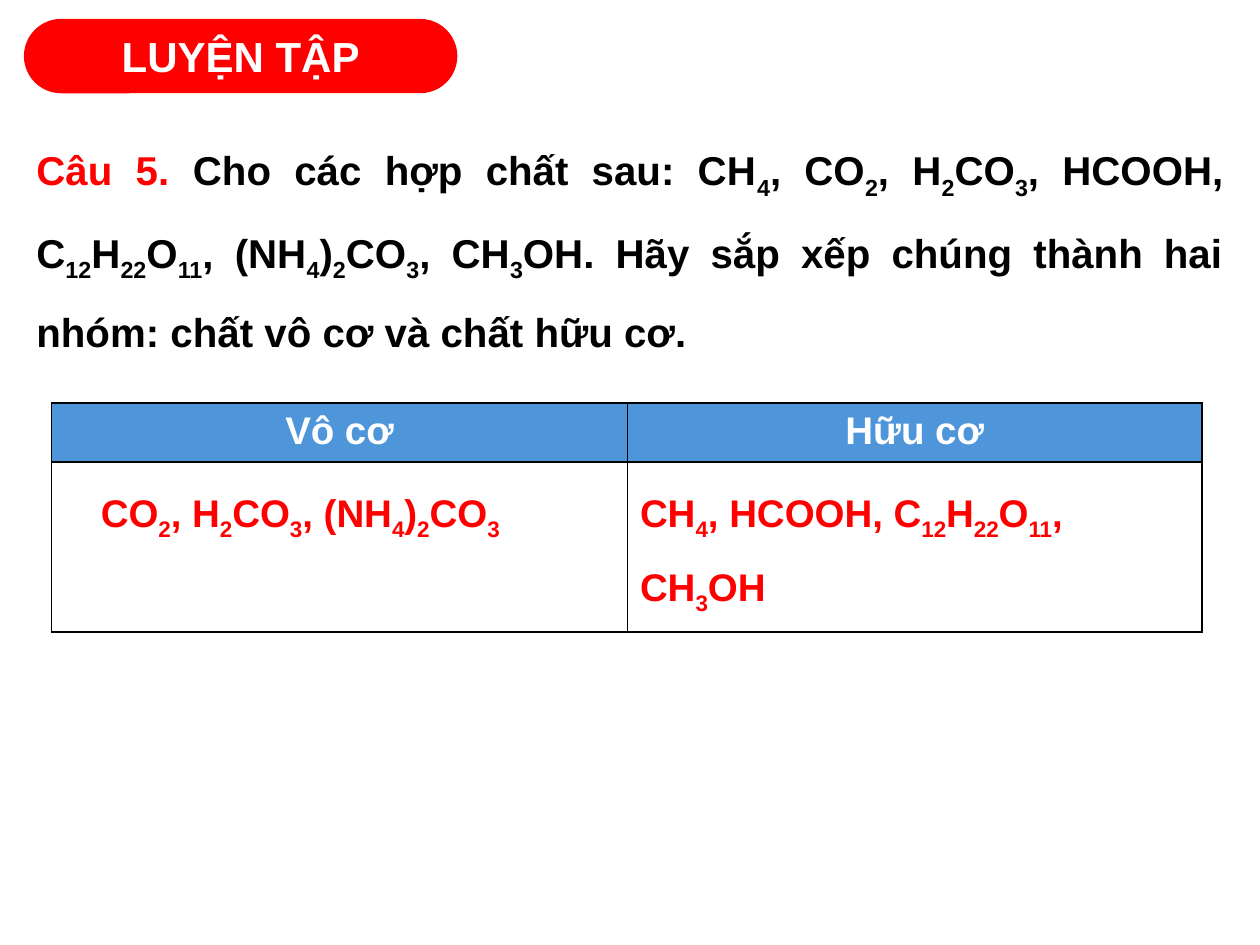
import itertools

import pptx
import pptx.util
import pptx.dml.color
import pptx.enum.shapes
import pptx.enum.text
import pptx.oxml
import pptx.oxml.ns

INK = {"red": "FF0000", "blue": "4E95D9", "white": "FFFFFF", "black": "000000"}
ALIGN = pptx.enum.text.PP_ALIGN
COLS, ROWS = 100, 75


def shade(name):
    return pptx.dml.color.RGBColor.from_string(INK[name])


class Deck:
    font = {"name": "Arial", "bold": True}
    edge = 1

    def __init__(self, wide, high):
        self.file = pptx.Presentation()
        self.file.slide_width = pptx.util.Inches(wide)
        self.file.slide_height = pptx.util.Inches(high)
        self.slide = self.file.slides.add_slide(self.file.slide_layouts[6])

    def across(self, cols):
        return round(self.file.slide_width * cols / COLS)

    def down(self, rows):
        return round(self.file.slide_height * rows / ROWS)

    def place(self, left, top, wide, high):
        return self.across(left), self.down(top), self.across(wide), self.down(high)

    def run(self, para, text, size, tint, low=False):
        run = para.add_run()
        run.text = text
        form = dict(self.font, size=pptx.util.Pt(size))
        for key, value in form.items():
            setattr(run.font, key, value)
        run.font.color.rgb = shade(tint)
        if low:
            run.font._element.set("baseline", "-25000")

    def words(self, frame, text, size, tint, lead="", indent=0, **form):
        para = frame.paragraphs[0]
        for key, value in form.items():
            setattr(para, key, value)
        if indent:
            props = para._p.get_or_add_pPr()
            props.set("marL", "0")
            props.set("indent", str(self.across(indent)))
        if lead:
            self.run(para, lead, size, "red")
        for low, part in itertools.groupby(text, str.isdigit):
            self.run(para, "".join(part), size, tint, low)

    def label(self, box, text, size, tint, **form):
        frame = self.slide.shapes.add_textbox(*self.place(*box)).text_frame
        frame.word_wrap = True
        frame.auto_size = pptx.enum.text.MSO_AUTO_SIZE.SHAPE_TO_FIT_TEXT
        self.words(frame, text, size, tint, **form)

    def badge(self, box, text, size, fill, tint):
        kind = pptx.enum.shapes.MSO_SHAPE.ROUNDED_RECTANGLE
        shape = self.slide.shapes.add_shape(kind, *self.place(*box))
        shape.adjustments[0] = 0.5
        shape.shadow.inherit = False
        shape.fill.solid()
        shape.fill.fore_color.rgb = shade(fill)
        shape.line.fill.background()
        shape.text_frame.vertical_anchor = pptx.enum.text.MSO_ANCHOR.MIDDLE
        self.words(shape.text_frame, text, size, tint, alignment=ALIGN.CENTER)

    def border(self, cell):
        props = cell._tc.get_or_add_tcPr()
        width = pptx.util.Pt(self.edge)
        for side in "LRTB":
            props.append(pptx.oxml.parse_xml(
                f'<a:ln{side} {pptx.oxml.ns.nsdecls("a")} w="{width}"><a:solidFill>'
                f'<a:srgbClr val="{INK["black"]}"/></a:solidFill></a:ln{side}>'))

    def table(self, box, wides, highs, size, head, body):
        grid = self.slide.shapes.add_table(
            len(highs), len(wides), *self.place(*box)).table
        for col, wide in zip(grid.columns, wides):
            col.width = self.across(wide)
        for row, high in zip(grid.rows, highs):
            row.height = self.down(high)
        for spot, text in enumerate(head):
            cell = grid.cell(0, spot)
            self.border(cell)
            cell.fill.solid()
            cell.fill.fore_color.rgb = shade("blue")
            self.words(cell.text_frame, text, size, "white", alignment=ALIGN.CENTER)
        for spot, (text, form) in enumerate(body):
            cell = grid.cell(1, spot)
            self.border(cell)
            cell.fill.background()
            self.words(cell.text_frame, text, size, "red", line_spacing=1.5, **form)


def main():
    deck = Deck(10, 7.5)
    deck.label(
        (1.9, 8.9, 96.2, 17.7),
        "Cho các hợp chất sau: CH4, CO2, H2CO3, HCOOH, C12H22O11, (NH4)2CO3, CH3OH. "
        "Hãy sắp xếp chúng thành hai nhóm: chất vô cơ và chất hữu cơ.",
        23, "black", lead="Câu 5. ", alignment=ALIGN.JUSTIFY, line_spacing=1.5)
    deck.badge((1.9, 1.5, 34.4, 5.9), "LUYỆN TẬP", 24, "red", "white")
    deck.table(
        (4.1, 32, 91.3, 16), (45.7, 45.6), (4.3, 10.3), 22,
        ("Vô cơ", "Hữu cơ"),
        (("CO2, H2CO3, (NH4)2CO3", {"alignment": ALIGN.JUSTIFY, "indent": 2.9}),
         ("CH4, HCOOH, C12H22O11, CH3OH", {"alignment": ALIGN.LEFT})))
    deck.file.save("out.pptx")


if __name__ == "__main__":
    main()
